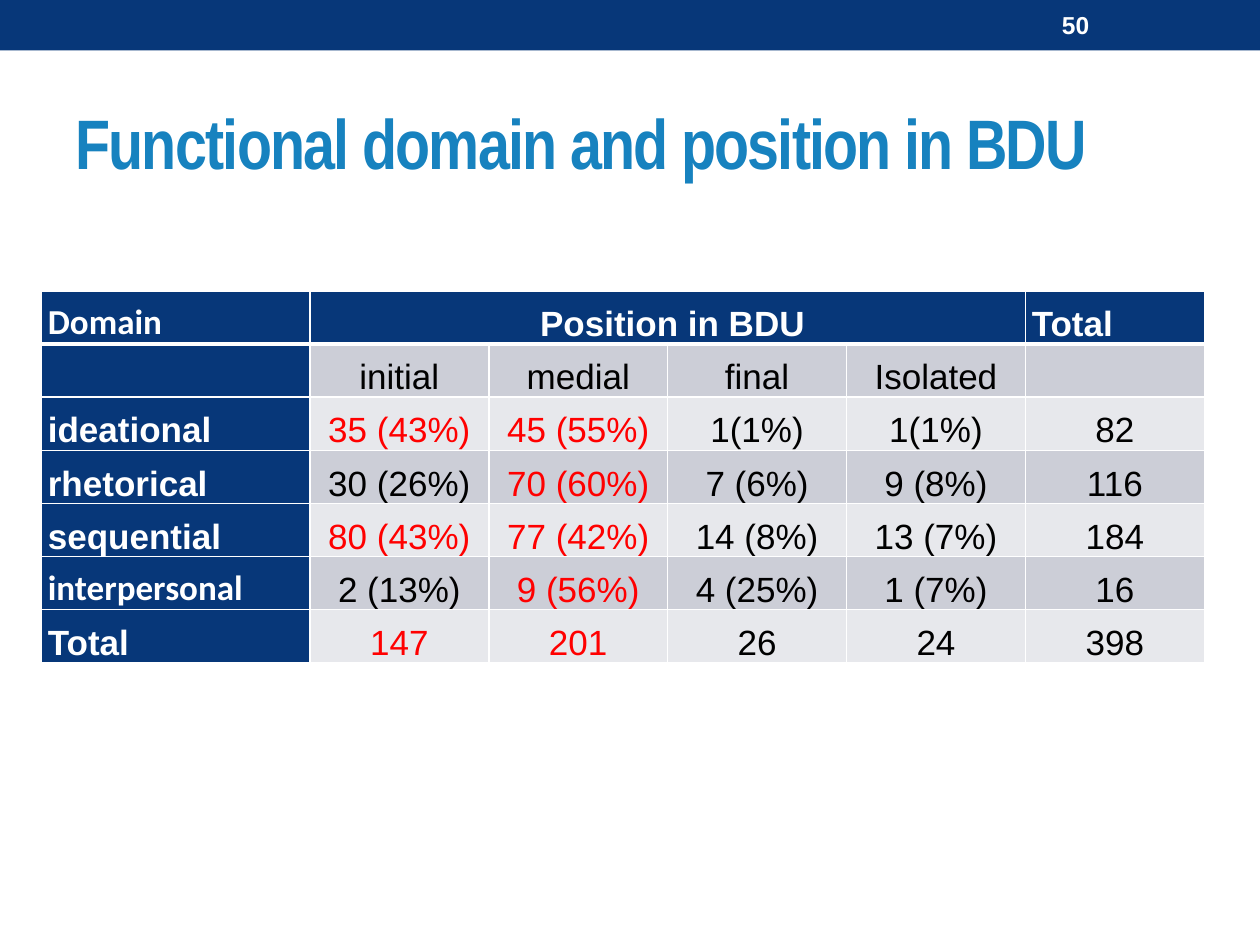
from lxml import etree
from pptx import Presentation, util as u
from pptx.dml.color import RGBColor
from pptx.enum import shapes, text
from pptx.oxml import ns

NAVY = RGBColor(0x07, 0x37, 0x79)
BLUE = RGBColor(0x17, 0x82, 0xBF)
WHITE = RGBColor(0xFF, 0xFF, 0xFF)
BLACK = RGBColor(0, 0, 0)
RED = RGBColor(0xFF, 0, 0)
DARK_BAND = RGBColor(0xCC, 0xCE, 0xD7)
LIGHT_BAND = RGBColor(0xE7, 0xE8, 0xEC)

DOMAIN_ROWS = [
    ["Domain", " Position in BDU", "", "", "", "Total"],
    ["", "initial", "medial", "final", "Isolated", ""],
    ["ideational", "35 (43%)", "45 (55%)", "1(1%)", "1(1%)", "82"],
    ["rhetorical", "30 (26%)", "70 (60%)", "7 (6%)", "9 (8%)", "116"],
    ["sequential", "80 (43%)", "77 (42%)", "14 (8%)", "13 (7%)", "184"],
    ["interpersonal", "2 (13%)", "9 (56%)", "4 (25%)", "1 (7%)", "16"],
    ["Total", "147", "201", "26", "24", "398"],
]
FREQUENT = {(2, 1), (2, 2), (3, 2), (4, 1), (4, 2), (5, 2), (6, 1), (6, 2)}
CALIBRI_LABELS = {"Domain", "interpersonal"}


class SlideBuilder:
    cell_format = {
        "margin_left": u.Inches(0.05),
        "margin_right": u.Inches(0.05),
        "margin_top": 0,
        "margin_bottom": 0,
        "vertical_anchor": text.MSO_ANCHOR.BOTTOM,
    }

    def __init__(self, slide):
        self.slide = slide

    def add_wording(self, paragraph, wording, color, **formats):
        run = paragraph.add_run()
        run.text = wording
        run.font.color.rgb = color
        for name, value in formats.items():
            setattr(run.font, name, value)
        return run

    def band(self, *box):
        banner = self.slide.shapes.add_shape(
            shapes.MSO_SHAPE.RECTANGLE, *map(u.Inches, box))
        banner.shadow.inherit = False
        banner.fill.solid()
        banner.fill.fore_color.rgb = NAVY
        banner.line.fill.background()

    def label(self, box, wording, color, spacing=0, **formats):
        frame = self.slide.shapes.add_textbox(*map(u.Inches, box)).text_frame
        frame.word_wrap = True
        frame.vertical_anchor = text.MSO_ANCHOR.MIDDLE
        run = self.add_wording(frame.paragraphs[0], wording, color, **formats)
        if spacing:
            run.font._element.set("spc", str(spacing))

    def borders(self, cell, **widths):
        properties = cell._tc.get_or_add_tcPr()
        for position, side in enumerate("LRTB"):
            width = u.Pt(widths.get(side, 1))
            line = etree.Element(ns.qn(f"a:ln{side}"), w=str(width))
            fill = etree.SubElement(line, ns.qn("a:solidFill"))
            etree.SubElement(fill, ns.qn("a:srgbClr"), val=str(WHITE))
            properties.insert(position, line)

    def table(self, box, rows, widths):
        grid = self.slide.shapes.add_table(
            len(rows), len(widths), *map(u.Inches, box)).table
        for column, width in zip(grid.columns, widths):
            column.width = u.Inches(width)
        for r, row in enumerate(rows):
            for c, wording in enumerate(row):
                self.cell(grid.cell(r, c), r, c, wording)
        grid.cell(0, 1).merge(grid.cell(0, 4))

    def cell(self, cell, r, c, wording):
        heading = r == 0 or c == 0
        for name, value in self.cell_format.items():
            setattr(cell, name, value)
        cell.fill.solid()
        band = DARK_BAND if r % 2 else LIGHT_BAND
        cell.fill.fore_color.rgb = NAVY if heading else band
        self.borders(cell, T=3 if r == 1 else 1, B=3 if r == 0 else 1)
        if not wording:
            return
        paragraph = cell.text_frame.paragraphs[0]
        if not heading or c == 1:
            paragraph.alignment = text.PP_ALIGN.CENTER
        color = WHITE if heading else RED if (r, c) in FREQUENT else BLACK
        font = "Calibri" if wording in CALIBRI_LABELS else "Arial"
        self.add_wording(paragraph, wording, color,
                         name=font, size=u.Pt(20), bold=heading)


def main():
    deck = Presentation()
    deck.slide_width, deck.slide_height = u.Inches(10), u.Inches(7.5)
    builder = SlideBuilder(deck.slides.add_slide(deck.slide_layouts[6]))
    builder.band(0, 0, 10, 0.4)
    builder.label((0.5, 0.58, 9, 1.08), "Functional domain and position in BDU",
                  BLUE, spacing=-100, name="Arial Narrow", size=u.Pt(40), bold=True)
    builder.label((8.33, 0.02, 1.17, 0.36), "50", WHITE,
                  name="Arial", size=u.Pt(14), bold=True)
    builder.table((0.33, 2.31, 9.24, 2.95), DOMAIN_ROWS, [2.13] + [1.42] * 5)
    deck.save("out.pptx")


if __name__ == "__main__":
    main()
